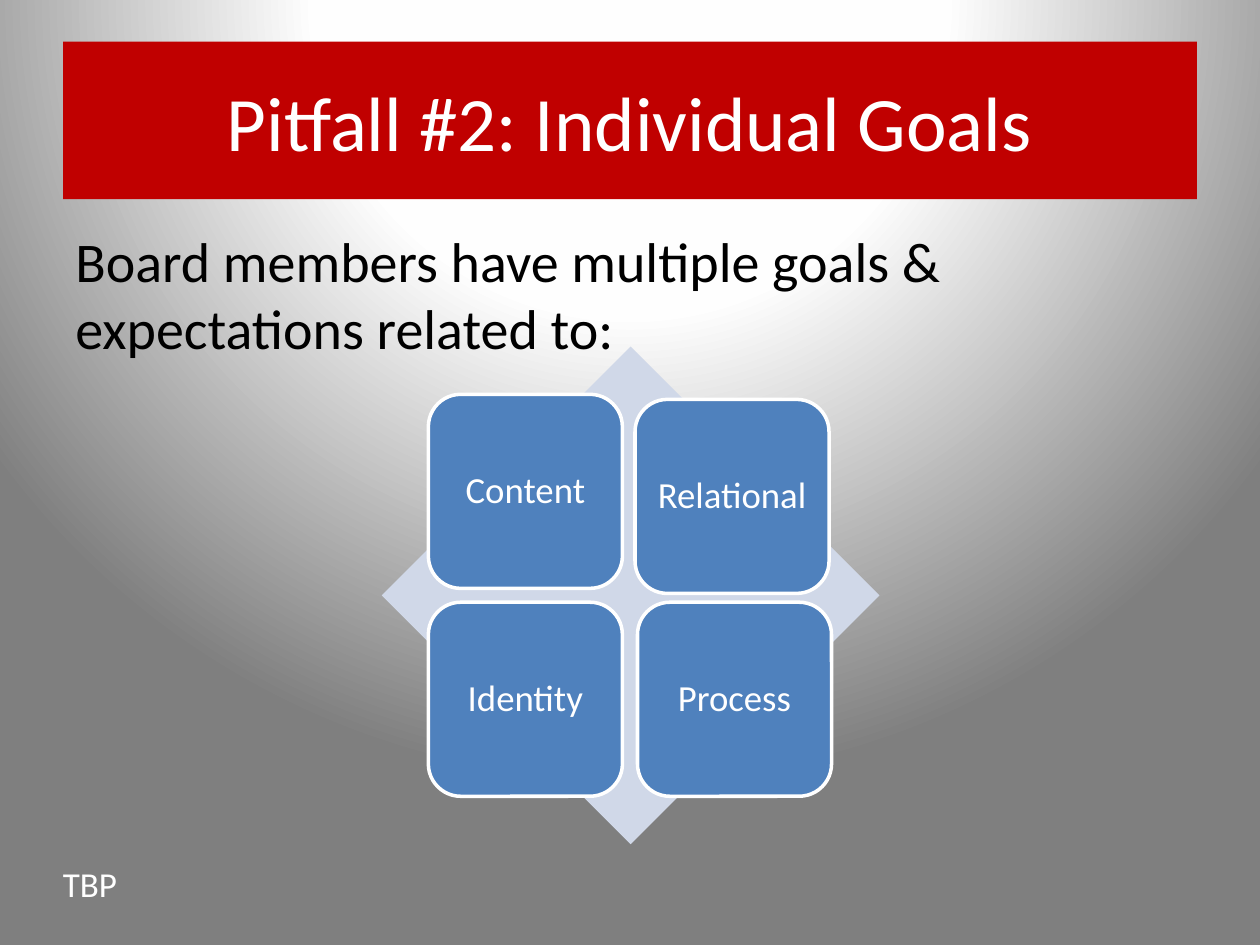
from lxml import etree
from pptx import Presentation
from pptx.dml.color import RGBColor
from pptx.enum.shapes import MSO_SHAPE
from pptx.enum.text import MSO_ANCHOR, PP_ALIGN
from pptx.oxml.ns import qn
from pptx.util import Inches, Pt

DIAMOND = MSO_SHAPE.DIAMOND
ROUNDED = MSO_SHAPE.ROUNDED_RECTANGLE
LEFT, CENTER = PP_ALIGN.LEFT, PP_ALIGN.CENTER
TOP, MIDDLE = MSO_ANCHOR.TOP, MSO_ANCHOR.MIDDLE
TITLE_ONLY = 5

COLORS = {
    "banner": "C00000",
    "diamond": "D0D8E8",
    "tile": "4F81BD",
    "white": "FFFFFF",
    "black": "000000",
}
GLOW_STOPS = [(0, "FFFFFF"), (40, "FEFEFE"), (100, "7F7F7F")]
GLOW_FOCUS = {"l": 50, "t": -80, "r": 50, "b": 180}
TILE_SIZE = 1.54
GOALS = [
    ("Content", 3.4, 3.13),
    ("Relational", 5.04, 3.17),
    ("Identity", 3.4, 4.78),
    ("Process", 5.06, 4.78),
]


def rgb(name):
    return RGBColor.from_string(COLORS[name])


def percent(value):
    return str(value * 1000)


def paint_background(slide):
    fill = slide.background.fill
    fill.solid()
    properties = slide.background._cSld.bg.bgPr
    gradient = etree.Element(qn("a:gradFill"), rotWithShape="1")
    stops = etree.SubElement(gradient, qn("a:gsLst"))
    for position, color in GLOW_STOPS:
        stop = etree.SubElement(stops, qn("a:gs"), pos=percent(position))
        etree.SubElement(stop, qn("a:srgbClr"), val=color)
    circle = etree.SubElement(gradient, qn("a:path"), path="circle")
    focus = {side: percent(value) for side, value in GLOW_FOCUS.items()}
    etree.SubElement(circle, qn("a:fillToRect"), **focus)
    properties.replace(properties.find(qn("a:solidFill")), gradient)


def write_text(shape, text, size, color="white", align=LEFT, anchor=TOP,
               wrap=True, inset=None, line_spacing=None):
    frame = shape.text_frame
    frame.word_wrap = wrap
    frame.vertical_anchor = anchor
    if inset is not None:
        frame.margin_left = frame.margin_right = Inches(inset)
        frame.margin_top = frame.margin_bottom = Inches(inset)
    paragraph = frame.paragraphs[0]
    paragraph.text = text
    paragraph.alignment = align
    if line_spacing is not None:
        paragraph.line_spacing = line_spacing
    paragraph.font.name = "Calibri"
    paragraph.font.size = Pt(size)
    paragraph.font.color.rgb = rgb(color)


def add_title(slide, text):
    title = slide.shapes.title
    title.left, title.top = Inches(0.5), Inches(0.33)
    title.width, title.height = Inches(9), Inches(1.25)
    title.fill.solid()
    title.fill.fore_color.rgb = rgb("banner")
    write_text(title, text, 44, align=CENTER, anchor=MIDDLE)


def add_label(slide, text, left, top, width, height, size, **text_format):
    label = slide.shapes.add_textbox(
        Inches(left), Inches(top), Inches(width), Inches(height))
    write_text(label, text, size, **text_format)


def add_figure(slide, preset, left, top, size, color, outline=None):
    figure = slide.shapes.add_shape(
        preset, Inches(left), Inches(top), Inches(size), Inches(size))
    figure.shadow.inherit = False
    figure.fill.solid()
    figure.fill.fore_color.rgb = rgb(color)
    if outline:
        figure.line.color.rgb = rgb(outline)
        figure.line.width = Pt(2)
    else:
        figure.line.fill.background()
    return figure


def add_goal_matrix(slide):
    add_figure(slide, DIAMOND, 3.03, 2.75, 3.95, "diamond")
    for goal, left, top in GOALS:
        tile = add_figure(slide, ROUNDED, left, top, TILE_SIZE, "tile", "white")
        write_text(tile, goal, 21, align=CENTER, anchor=MIDDLE,
                   inset=0.09, line_spacing=0.9)


def main():
    presentation = Presentation()
    presentation.slide_width = Inches(10)
    presentation.slide_height = Inches(7.5)
    slide = presentation.slides.add_slide(presentation.slide_layouts[TITLE_ONLY])
    paint_background(slide)
    add_title(slide, "Pitfall #2: Individual Goals")
    add_goal_matrix(slide)
    add_label(slide, "Board members have multiple goals & expectations related to:",
              0.5, 1.75, 8.58, 1.48, 32, color="black")
    add_label(slide, "TBP", 0.4, 6.8, 0.64, 0.44, 20, wrap=False)
    presentation.save("out.pptx")


if __name__ == "__main__":
    main()
